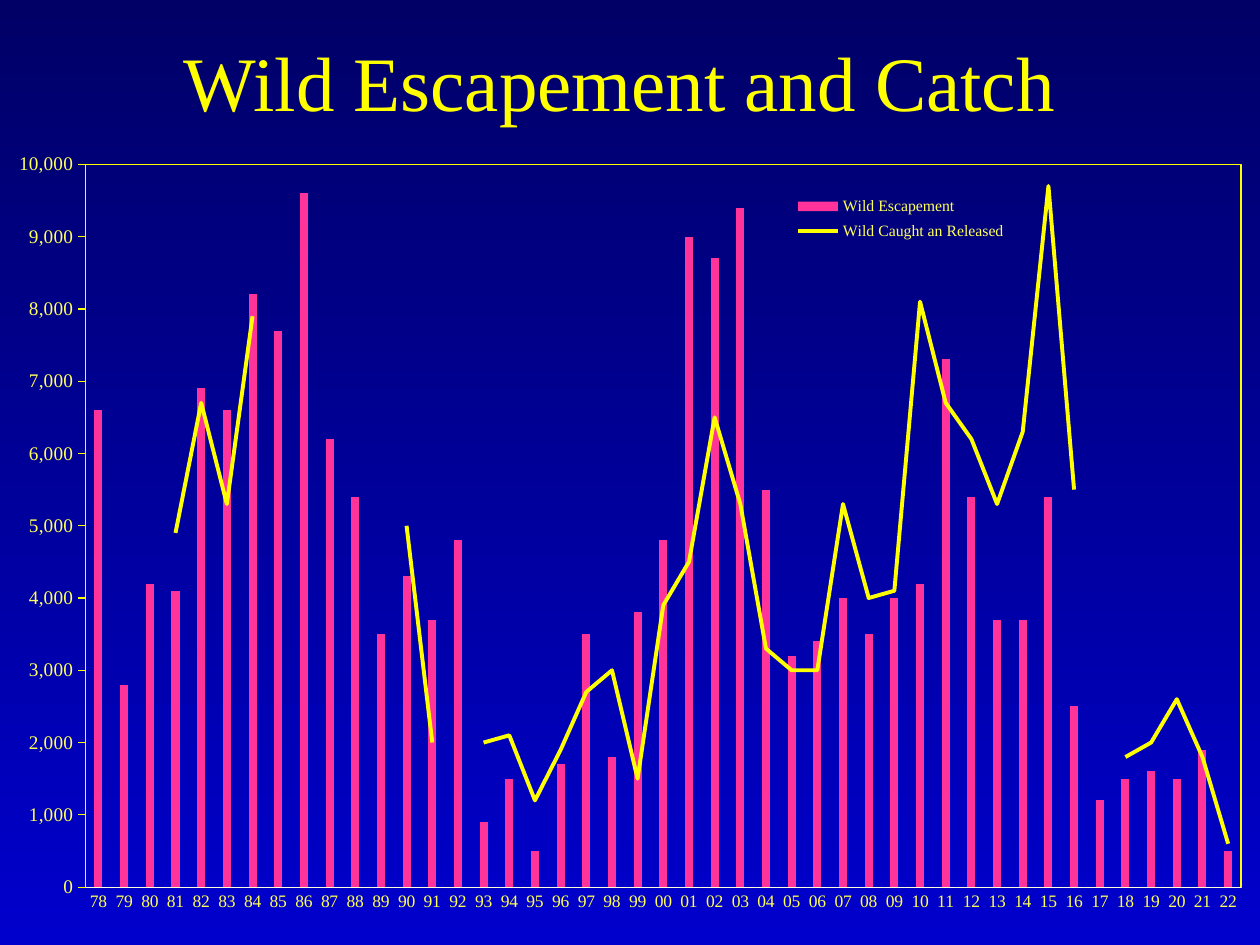
import copy
import lxml.etree
import pptx
import pptx.chart.data
import pptx.dml.color
import pptx.enum.chart
import pptx.enum.text
import pptx.oxml
import pptx.oxml.ns
import pptx.util

TITLE = "Wild Escapement and Catch"
FONT = "Times New Roman"
COLORS = {"top": "000066", "base": "0000CC", "main": "FFFF00",
          "label": "FFFF59", "floor": "FFFFD9", "bar": "FF3399"}
YEARS = [f"{year % 100:02d}" for year in range(1978, 2023)]
WILD = [6600, 2800, 4200, 4100, 6900, 6600, 8200, 7700, 9600, 6200, 5400, 3500,
        4300, 3700, 4800, 900, 1500, 500, 1700, 3500, 1800, 3800, 4800, 9000,
        8700, 9400, 5500, 3200, 3400, 4000, 3500, 4000, 4200, 7300, 5400, 3700,
        3700, 5400, 2500, 1200, 1500, 1600, 1500, 1900, 500]
CAUGHT = [4000, None, None, 4900, 6700, 5300, 7900, None, None, None, None, None,
          5000, 2000, None, 2000, 2100, 1200, 1900, 2700, 3000, 1500, 3900, 4500,
          6500, 5300, 3300, 3000, 3000, 5300, 4000, 4100, 8100, 6700, 6200, 5300,
          6300, 9700, 5500, None, 1800, 2000, 2600, 1800, 600]
SERIES = {"Wild Escapement": WILD, "Wild Caught an Released": CAUGHT}
TITLE_BOX = (0.42, 0.24, 9, 0.8)
CHART_BOX = (0, 1.08, 10, 6.25)
PLOT_AREA = (0.068, 0.036, 0.917, 0.918)
KEY_AREA = (0.62, 0.07, 0.19, 0.07)
C = "{%s}" % pptx.oxml.ns.nsuri("c")
XMLNS = pptx.oxml.ns.nsdecls("c", "a")


def color(name):
    return pptx.dml.color.RGBColor.from_string(COLORS[name])


def inches(box):
    return [pptx.util.Inches(n) for n in box]


def style(font, size, name):
    for key, value in {"name": FONT, "size": pptx.util.Pt(size), "bold": False}.items():
        setattr(font, key, value)
    font.color.rgb = color(name)


def stroke(line, name, width):
    line.color.rgb = color(name)
    line.width = pptx.util.Pt(width)


def drop(part, tag):
    for old in part.findall(C + tag):
        part.remove(old)


def place(part, index, area, inner=False):
    drop(part, "layout")
    target = '<c:layoutTarget val="inner"/>' if inner else ""
    modes = "".join(f'<c:{k}Mode val="edge"/>' for k in "xy")
    sizes = "".join(f'<c:{k} val="{v}"/>' for k, v in zip("xywh", area))
    part.insert(index, pptx.oxml.parse_xml(
        f"<c:layout {XMLNS}><c:manualLayout>{target}{modes}{sizes}"
        "</c:manualLayout></c:layout>"))


def split_line(bars):
    line = pptx.oxml.parse_xml(
        f'<c:lineChart {XMLNS}><c:grouping val="standard"/>'
        '<c:varyColors val="0"/></c:lineChart>')
    caught = bars.findall(C + "ser")[1]
    drop(caught, "invertIfNegative")
    line.append(caught)
    lxml.etree.SubElement(line, C + "marker").set("val", "1")
    for axis in bars.findall(C + "axId"):
        line.append(copy.deepcopy(axis))
    bars.addnext(line)


def add_title(slide):
    frame = slide.shapes.add_textbox(*inches(TITLE_BOX)).text_frame
    frame.word_wrap = True
    frame.vertical_anchor = pptx.enum.text.MSO_ANCHOR.MIDDLE
    para = frame.paragraphs[0]
    para.text = TITLE
    para.alignment = pptx.enum.text.PP_ALIGN.CENTER
    style(para.font, 44, "main")


def add_chart(slide):
    kinds = pptx.enum.chart
    data = pptx.chart.data.CategoryChartData(number_format="#,##0")
    data.categories = YEARS
    for name, values in SERIES.items():
        data.add_series(name, values)
    chart = slide.shapes.add_chart(
        kinds.XL_CHART_TYPE.COLUMN_CLUSTERED, *inches(CHART_BOX), data).chart
    chart.has_title = False
    style(chart.font, 10, "main")

    group = chart.plots[0]._element
    area = group.getparent()
    split_line(group)
    place(area, 0, PLOT_AREA, inner=True)
    area.append(pptx.oxml.parse_xml(
        f'<c:spPr {XMLNS}><a:noFill/><a:ln w="9525"><a:solidFill>'
        f'<a:srgbClr val="{COLORS["main"]}"/></a:solidFill></a:ln></c:spPr>'))

    bars, lines = chart.plots
    bars.gap_width = 219
    bars.vary_by_categories = False
    wild = bars.series[0]
    wild.invert_if_negative = False
    wild.format.fill.solid()
    wild.format.fill.fore_color.rgb = color("bar")
    caught = lines.series[0]
    caught.smooth = False
    caught.marker.style = kinds.XL_MARKER_STYLE.NONE
    stroke(caught.format.line, "main", 2.25)

    marks = kinds.XL_TICK_MARK
    for axis, size, name, tick in (
            (chart.category_axis, 10, "floor", marks.NONE),
            (chart.value_axis, 11, "main", marks.OUTSIDE)):
        for key, value in {"has_major_gridlines": False, "major_tick_mark": tick,
                           "minor_tick_mark": marks.NONE}.items():
            setattr(axis, key, value)
        style(axis.tick_labels.font, size, "label")
        stroke(axis.format.line, name, 0.75)
    scale = {"minimum_scale": 0, "maximum_scale": 10000, "major_unit": 1000}
    for key, value in scale.items():
        setattr(chart.value_axis, key, value)
    labels = chart.value_axis.tick_labels
    labels.number_format = "#,##0"
    labels.number_format_is_linked = False

    chart.has_legend = True
    legend = chart.legend
    legend.position = kinds.XL_LEGEND_POSITION.RIGHT
    legend.include_in_layout = False
    style(legend.font, 9, "label")
    place(legend._element, 1, KEY_AREA)


def main():
    deck = pptx.Presentation()
    deck.slide_width, deck.slide_height = inches((10, 7.5))
    slide = deck.slides.add_slide(deck.slide_layouts[6])
    back = slide.background.fill
    back.gradient()
    back.gradient_angle = 270
    for stop, name, spot in zip(back.gradient_stops, ("top", "base"), (0, 1)):
        stop.color.rgb = color(name)
        stop.position = spot
    add_title(slide)
    add_chart(slide)
    deck.save("out.pptx")


if __name__ == "__main__":
    main()
